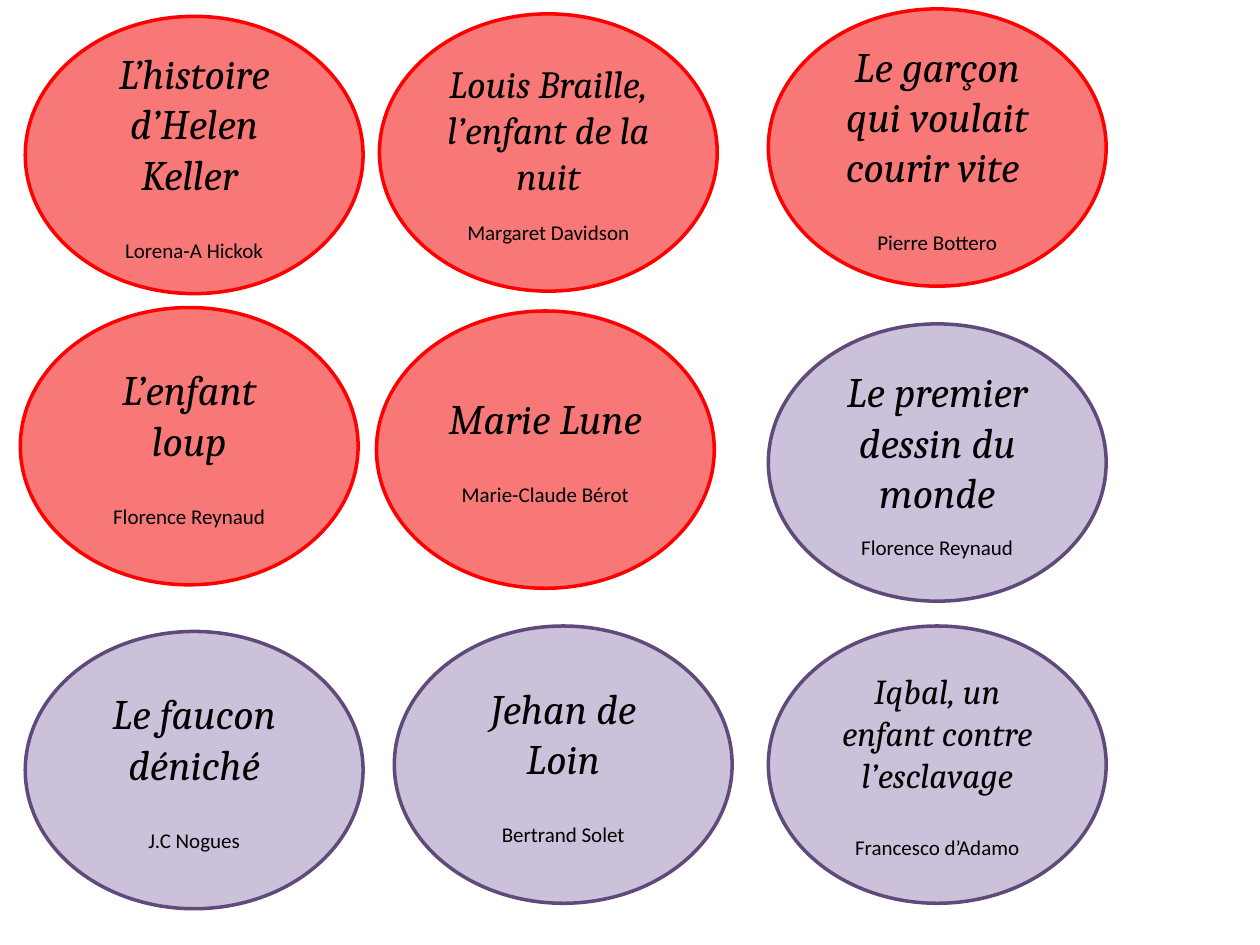
"""Build a slide of nine ovals, each naming a book and its author."""
from dataclasses import dataclass

from pptx import Presentation
from pptx.dml.color import RGBColor
from pptx.enum.shapes import MSO_SHAPE
from pptx.enum.text import MSO_ANCHOR, PP_ALIGN
from pptx.util import Cm, Pt


@dataclass(frozen=True)
class Palette:
    """Fill and outline of one group of books."""
    fill: RGBColor
    line: RGBColor


@dataclass(frozen=True)
class Theme:
    """Colours, fonts and sizes of the slide."""
    red: Palette = Palette(RGBColor(0xF8, 0x78, 0x78), RGBColor(0xFF, 0x00, 0x00))
    violet: Palette = Palette(RGBColor(0xCC, 0xC1, 0xDA), RGBColor(0x60, 0x4A, 0x7B))
    text: RGBColor = RGBColor(0x00, 0x00, 0x00)
    title_font: str = "Cambria"
    author_font: str = "Calibri"
    title_size: float = 24
    author_size: float = 12
    outline: float = 2
    oval_width: float = 6.81
    oval_height: float = 5.59


THEME = Theme()


@dataclass(frozen=True)
class Book:
    """One oval, placed in centimetres, with its gap in points."""
    title: str
    author: str
    left: float
    top: float
    palette: Palette
    size: float = THEME.title_size
    gap: float = 22


BOOKS = (
    Book("Le faucon déniché", "J.C Nogues", 0.51, 12.73, THEME.violet),
    Book("L’histoire d’Helen Keller ", "Lorena-A Hickok", 0.51, 0.33, THEME.red),
    Book("Le premier dessin du monde", "Florence Reynaud", 15.49, 6.53, THEME.violet, gap=9.8),
    Book("Jehan de Loin", "Bertrand Solet", 7.95, 12.62, THEME.violet),
    Book("Iqbal, un enfant contre l’esclavage", "Francesco d’Adamo", 15.49, 12.62, THEME.violet, size=20),
    Book("Louis Braille, l’enfant de la nuit", "Margaret Davidson", 7.65, 0.28, THEME.red, size=22, gap=12.2),
    Book("Le garçon qui voulait courir vite ", "Pierre Bottero", 15.49, 0.18, THEME.red),
    Book("L’enfant loup", "Florence Reynaud", 0.41, 6.2, THEME.red),
    Book("Marie Lune", "Marie-Claude Bérot", 7.59, 6.27, THEME.red),
)


def write_line(para, text: str, font: str, size: float, italic: bool) -> None:
    """Add one centred run to a paragraph."""
    para.alignment = PP_ALIGN.CENTER
    span = para.add_run()
    span.text = text
    span.font.name = font
    span.font.size = Pt(size)
    span.font.italic = italic
    span.font.color.rgb = THEME.text


def draw_book(page, book: Book) -> None:
    """Draw the oval of one book."""
    oval = page.shapes.add_shape(
        MSO_SHAPE.OVAL, Cm(book.left), Cm(book.top), Cm(THEME.oval_width), Cm(THEME.oval_height)
    )
    oval.shadow.inherit = False
    oval.fill.solid()
    oval.fill.fore_color.rgb = book.palette.fill
    oval.line.color.rgb = book.palette.line
    oval.line.width = Pt(THEME.outline)
    box = oval.text_frame
    box.word_wrap = True
    box.vertical_anchor = MSO_ANCHOR.MIDDLE
    write_line(box.paragraphs[0], book.title, THEME.title_font, book.size, True)
    author = box.add_paragraph()
    author.space_before = Pt(book.gap)
    write_line(author, book.author, THEME.author_font, THEME.author_size, False)


def main() -> None:
    """Build and save the deck."""
    deck = Presentation()
    deck.slide_width, deck.slide_height = Cm(25.4), Cm(19.05)
    page = deck.slides.add_slide(deck.slide_layouts[6])
    for book in BOOKS:
        draw_book(page, book)
    deck.save("out.pptx")


if __name__ == "__main__":
    main()
